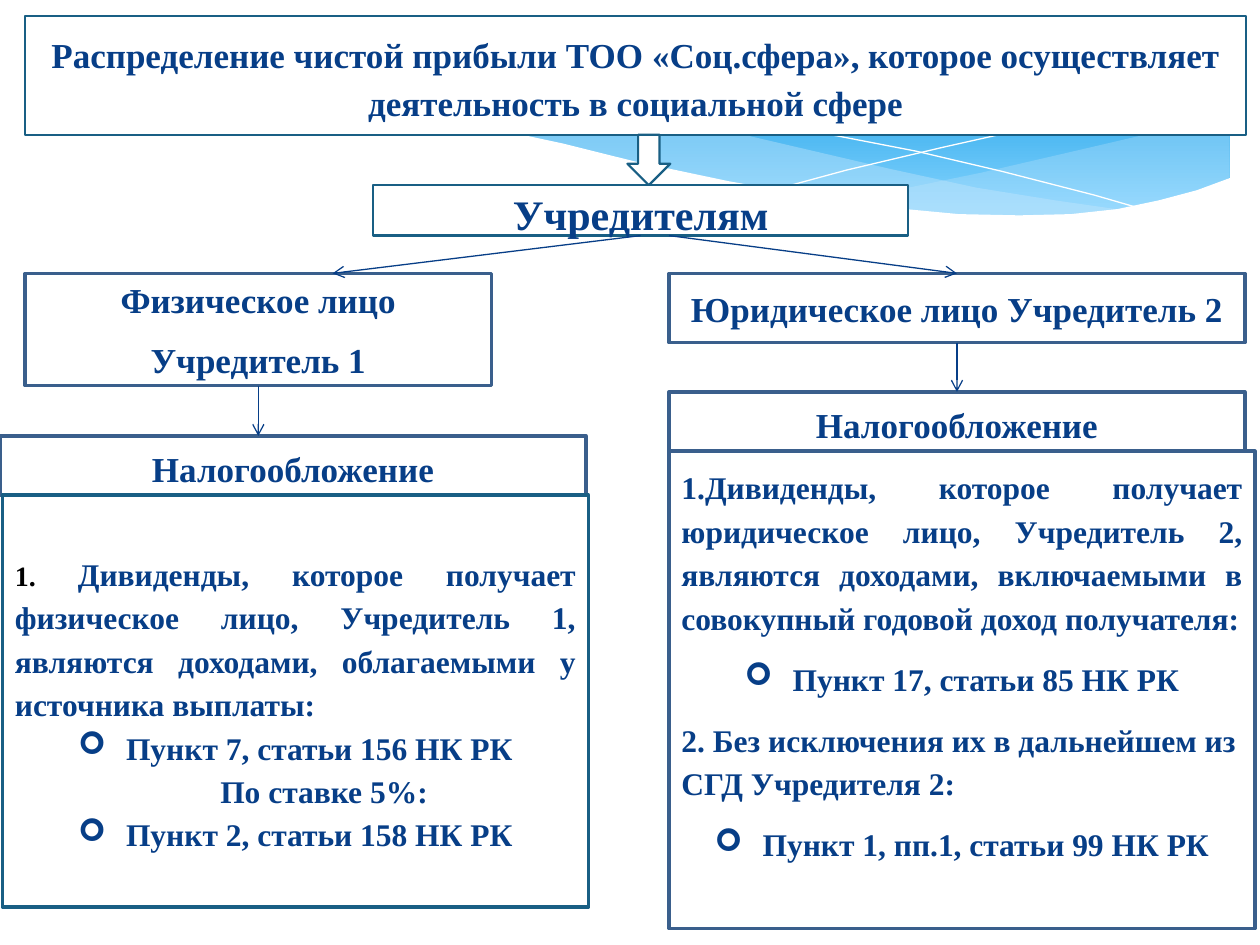
from lxml import etree
from pptx import Presentation
from pptx.dml.color import RGBColor
from pptx.enum.shapes import MSO_CONNECTOR, MSO_SHAPE
from pptx.enum.text import MSO_ANCHOR, PP_ALIGN
from pptx.oxml.ns import qn
from pptx.util import Inches, Pt

RECT, ROUND = MSO_SHAPE.RECTANGLE, MSO_SHAPE.ROUNDED_RECTANGLE
DOWN, LINE = MSO_SHAPE.DOWN_ARROW, MSO_CONNECTOR.STRAIGHT
LEFT, MID, JUST = PP_ALIGN.LEFT, PP_ALIGN.CENTER, PP_ALIGN.JUSTIFY
TOP, BOTTOM = 0, 2
COLS, ROWS = 100, 75
WIDE, HIGH = Inches(10), Inches(7.5)
FONT = "Times New Roman"
NAVY, TEAL, STEEL = "073E87", "195F84", "3A5F8C"
WHITE, BLACK, PALE = "FFFFFF", "000000", "C6E7FC"


def rgb(code):
    return RGBColor.from_string(code)


def col(n):
    return round(n * WIDE / COLS)


def row(n):
    return round(n * HIGH / ROWS)


def panel(slide, box, edge, width, kind=RECT):
    x, y, w, h = box
    shape = slide.shapes.add_shape(kind, col(x), row(y), col(w), row(h))
    shape.shadow.inherit = False
    shape.fill.solid()
    shape.fill.fore_color.rgb = rgb(WHITE)
    shape.line.color.rgb = rgb(edge)
    shape.line.width = Pt(width)
    return shape


def style(run, size, color=NAVY):
    run.font.name, run.font.size, run.font.bold = FONT, Pt(size), True
    run.font.color.rgb = rgb(color)


def write(shape, lines, size, after=10, space=1.15):
    """Fill a panel with (text, alignment) lines."""
    frame = shape.text_frame
    frame.word_wrap = True
    frame.vertical_anchor = MSO_ANCHOR.MIDDLE
    frame.text = "\n".join(text for text, _ in lines)
    for para, (_, align) in zip(frame.paragraphs, lines):
        para.alignment = align
        para.line_spacing = space
        para.space_after = Pt(after)
        style(para.runs[0], size)
    return frame.paragraphs


def indent(para, left, first=0):
    props = para._p.get_or_add_pPr()
    props.set("marL", str(col(left)))
    props.set("indent", str(col(first)))
    return props


def bullet(para):
    props = indent(para, 3.8, -3.8)
    etree.SubElement(props, qn("a:buFont"), typeface="Wingdings")
    etree.SubElement(props, qn("a:buChar"), char="➢")


def arrow(slide, start, end):
    line = slide.shapes.add_connector(LINE, col(start[0]), row(start[1]), col(end[0]), row(end[1]))
    line.line.color.rgb = rgb(NAVY)
    line.line.width = Pt(0.75)
    etree.SubElement(line.line._get_or_add_ln(), qn("a:tailEnd"), type="arrow")
    etree.SubElement(line._element.spPr, qn("a:effectLst"))
    return line


def curve(slide, points, fill=None, alpha=100):
    """Draw a filled outline, or a white hairline when there is no fill."""
    spots = [(col(x), row(y)) for x, y in points]
    form = slide.shapes.build_freeform(*spots[0], scale=1.0)
    form.add_line_segments(spots[1:], close=fill is not None)
    shape = form.convert_to_shape()
    shape.shadow.inherit = False
    if fill is None:
        shape.fill.background()
        shape.line.color.rgb = rgb(WHITE)
        shape.line.width = Pt(0)
        return
    shape.line.fill.background()
    shape.fill.solid()
    shape.fill.fore_color.rgb = rgb(fill)
    tint = shape._element.spPr.find(".//" + qn("a:srgbClr"))
    etree.SubElement(tint, qn("a:alpha"), val=str(alpha * 1000))


def waves(slide, box):
    # Blue band
    band = panel(slide, box, WHITE, 0, ROUND)
    band.adjustments[0] = 0.07
    band.line.fill.background()
    band.fill.gradient()
    band.fill.gradient_angle = 270
    for stop, code, place in zip(band.fill.gradient_stops, ("0293E0", "83D3FE"), (0, 0.9)):
        stop.color.rgb = rgb(code)
        stop.position = place
    x, y, w, h = box
    end, base = x + w, y + h

    # Pale swells
    curve(slide, [(end, 9.4), (92.1, 10.4), (86.1, 11.8), (77.9, 13.7), (70.6, 15.2),
                  (66.1, 16), (71.9, 16.7), (76.9, 17.1), (81.4, 17.2), (85.4, 17),
                  (88.9, 16.6), (92.1, 16), (94.9, 15.2), (end, 14.1)], PALE, 29)
    curve(slide, [(89.3, 16.7), (83.7, 15.9), (77.5, 14.9), (70.6, 13.4), (62.9, 11.6),
                  (56.9, 10.2), (51.4, 9.2), (46.5, 8.6), (42, 8.2), (38, 8), (34.4, 8),
                  (31.3, 8.2), (28.6, 8.6), (34.2, 9.4), (40.4, 10.6), (44.9, 11.6),
                  (53, 13.5), (60.1, 15), (66.5, 16.1), (72.2, 16.8), (77.3, 17.2),
                  (81.8, 17.3), (85.7, 17.1)], PALE, 40)

    # Hairlines
    curve(slide, [(30.9, 9), (35.3, 8.4), (40.1, 8.2), (46.9, 8.3), (53.3, 8.8),
                  (60.8, 9.8), (66.5, 10.8), (72.7, 12), (79.5, 13.6), (86.9, 15.5),
                  (90.7, 16.6)])
    curve(slide, [(61.3, 15.1), (67.2, 13.5), (74.8, 11.7), (80.6, 10.4), (86.6, 9.3),
                  (92.4, 8.4), (97.5, 8)])

    # White lower edge
    curve(slide, [(end + 0.1, 14.1), (95, 15.1), (92, 15.9), (88.7, 16.6), (85, 17),
                  (80.9, 17.1), (76.1, 17), (70.8, 16.5), (64.8, 15.6), (57.9, 14.4),
                  (50.3, 12.8), (44.7, 11.4), (39.1, 10.2), (34, 9.2), (29.2, 8.5),
                  (25, 8.1), (19.3, 7.8), (14.6, 7.9), (10.6, 8.3), (7.6, 8.9),
                  (5.2, 9.6), (2.3, 10.7), (2.3, base + 4.3), (end + 0.1, base + 4.3)], WHITE)


def head(slide, box):
    x, y, w, h = box
    write(panel(slide, box, TEAL, 1.25),
          [("Распределение чистой прибыли ТОО «Соц.сфера», которое осуществляет "
            "деятельность в социальной сфере", MID)], 20)
    owner = panel(slide, (x + 27.6, y + h + 4, 42.5, 4), TEAL, 1.25)
    write(owner, [("Учредителям", MID)], 24)
    panel(slide, (x + 47.8, y + h, 3.4, 4), TEAL, 1.25, DOWN)
    return owner


def branch(slide, box, size, tax, body, edge, names, text):
    """Place name, tax heading and details; tax and body are (left, top, width, height) offsets."""
    x, y = box
    name = panel(slide, (x, y, *size), STEEL, 2)
    write(name, [(line, MID) for line in names], 20, space=1)
    title = panel(slide, (x + tax[0], y + tax[1], *tax[2:]), STEEL, 2)
    write(title, [("Налогообложение", MID)], 20)
    note = panel(slide, (x + body[0], y + body[1], *body[2:]), edge, 2)
    paras = write(note, text, 18, after=10 if edge == STEEL else 0)
    for para in paras:
        if para.alignment == MID:
            bullet(para)
    mid = x + size[0] / 2
    link = arrow(slide, (mid, y + size[1]), (mid, y + tax[1]))
    link.begin_connect(name, BOTTOM)
    if tax[2] == size[0]:
        link.end_connect(title, TOP)
    return name, note, paras


def person(slide, box):
    _, _, paras = branch(
        slide, box, (37, 8.9), (-2, 12.9, 46.5, 4.7), (-1.8, 17.6, 46.5, 32.7), TEAL,
        ["Физическое лицо", "Учредитель 1"],
        [("1. ", JUST), ("Пункт 7, статьи 156 НК РК", MID),
         ("По ставке 5%:", LEFT), ("Пункт 2, статьи 158 НК РК", MID)])
    style(paras[0].runs[0], 16, BLACK)
    run = paras[0].add_run()
    run.text = ("Дивиденды, которое получает физическое лицо, Учредитель 1, "
                "являются доходами, облагаемыми у источника выплаты:")
    style(run, 18)
    indent(paras[2], 16.3)
    paras[-1].space_after = Pt(10)


def firm(slide, box):
    name, note, _ = branch(
        slide, box, (45.7, 5.5), (0, 9.4, 45.7, 4.7), (0, 14.1, 46.5, 37.9), STEEL,
        ["Юридическое лицо Учредитель 2"],
        [("1.Дивиденды, которое получает юридическое лицо, Учредитель 2, являются "
          "доходами, включаемыми в совокупный годовой доход получателя:", JUST),
         ("Пункт 17, статьи 85 НК РК", MID),
         ("2. Без исключения их в дальнейшем из СГД Учредителя 2:", LEFT),
         ("Пункт 1, пп.1, статьи 99 НК РК", MID)])
    note.text_frame.margin_bottom = row(4.8)
    return name


def main():
    deck = Presentation()
    deck.slide_width, deck.slide_height = WIDE, HIGH
    slide = deck.slides.add_slide(deck.slide_layouts[6])
    waves(slide, (2.5, 2.5, 95.1, 15.6))
    owner = head(slide, (2, 1.3, 96.9, 9.4))
    person(slide, (2, 21.7))
    name = firm(slide, (53.1, 21.7))

    # Split from the founders to both branches
    arrow(slide, (50.8, 18.7), (26.4, 21.7)).begin_connect(owner, BOTTOM)
    arrow(slide, (53.1, 18.7), (76, 21.7)).end_connect(name, TOP)
    deck.save("out.pptx")


if __name__ == "__main__":
    main()
